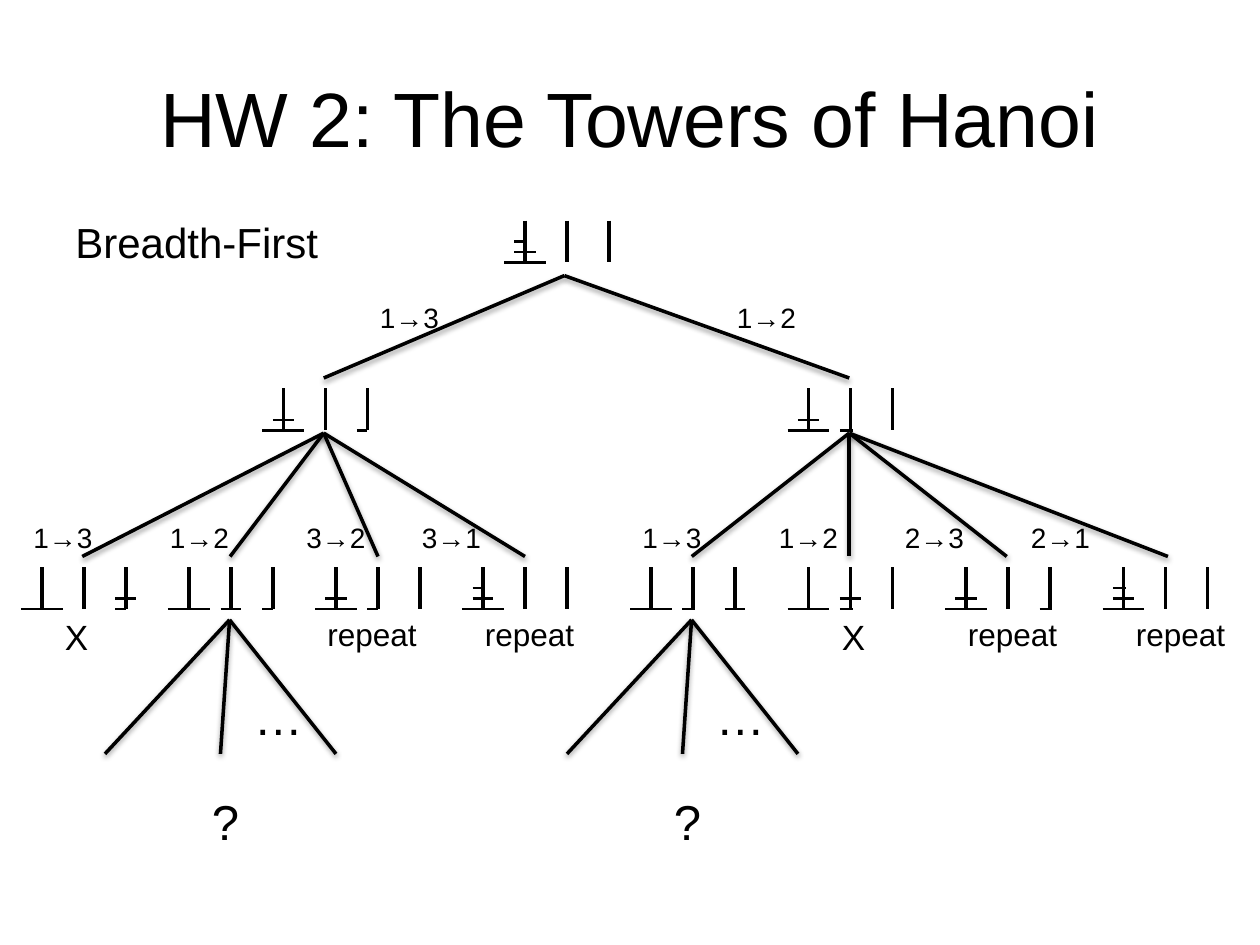
from lxml import etree
from pptx import Presentation
from pptx.dml.color import RGBColor
from pptx.enum import shapes, text
from pptx.oxml.ns import qn
from pptx.util import Pt

BLACK = "000000"
PEG_GAP = 24
PEG_HEIGHT = 24
DISC_STEP = 6

# Each move: label, label left, branch end, board left peg, discs per peg
# (bottom first), verdict, verdict left
LEFT_MOVES = [
    ("1→3", 12, 47, 24, ("L", "", "SM"), "X", 30),
    ("1→2", 90, 131.5, 108, ("L", "M", "S"), None, 0),
    ("3→2", 168, 216, 192, ("LM", "S", ""), "repeat", 180),
    ("3→1", 234, 300, 276, ("LMS", "", ""), "repeat", 270),
]
RIGHT_MOVES = [
    ("1→3", 360, 395.3, 372, ("L", "S", "M"), None, 0),
    ("1→2", 438, 485.3, 462, ("L", "SM", ""), "X", 474),
    ("2→3", 510, 575.3, 552, ("LM", "", "S"), "repeat", 546),
    ("2→1", 582, 667.4, 642, ("LMS", "", ""), "repeat", 642),
]
VERDICT_SIZES = {"X": (20, 28, 32), "repeat": (18, 66, 29)}


def rgb(color):
    return RGBColor.from_string(color)


def add_line(s, x1, y1, x2, y2, width, shadow=False):
    line = s.shapes.add_connector(
        shapes.MSO_CONNECTOR.STRAIGHT, Pt(x1), Pt(y1), Pt(x2), Pt(y2))
    line.line.color.rgb = rgb(BLACK)
    line.line.width = Pt(width)
    effects = etree.SubElement(line._element.spPr, qn("a:effectLst"))
    if shadow:
        outer = etree.SubElement(effects, qn("a:outerShdw"), blurRad="40000",
                                 dist="20000", dir="5400000", rotWithShape="0")
        color = etree.SubElement(outer, qn("a:srgbClr"), val=BLACK)
        etree.SubElement(color, qn("a:alpha"), val="38000")


def add_branch(s, x1, y1, x2, y2):
    add_line(s, x1, y1, x2, y2, 2, shadow=True)


def add_text(s, words, x, y, w, h, size, title=False):
    sp = s.shapes.add_textbox(Pt(x), Pt(y), Pt(w), Pt(h))
    tf = sp.text_frame
    tf.word_wrap = title
    p = tf.paragraphs[0]
    p.text = words
    p.font.name = "Arial"
    p.font.size = Pt(size)
    p.font.color.rgb = rgb(BLACK)
    if title:
        p.alignment = text.PP_ALIGN.CENTER
        tf.vertical_anchor = text.MSO_ANCHOR.MIDDLE
    else:
        tf.auto_size = text.MSO_AUTO_SIZE.SHAPE_TO_FIT_TEXT


def add_move_label(s, move, x, y):
    add_text(s, move, x, y, 49, 26.7, 16)


def add_board(s, left, top, pegs, small=7.2):
    """Three pegs with their stacked discs; small discs sit left of the peg."""
    reach = {"L": (12, 12), "M": (6, 6), "S": (6, small - 6)}
    bottom = top + PEG_HEIGHT
    for i, discs in enumerate(pegs):
        x = left + i * PEG_GAP
        add_line(s, x, top, x, bottom, 2.25)
        for level, disc in enumerate(discs):
            y = bottom - level * DISC_STEP
            before, after = reach[disc]
            add_line(s, x - before, y, x + after, y, 1.5)


def add_moves(s, apex, moves, small):
    for move, label_x, end, left, pegs, verdict, verdict_x in moves:
        add_branch(s, apex, 247.5, end, 318)
        add_move_label(s, move, label_x, 294)
        add_board(s, left, 324, pegs, small)
        if verdict:
            size, w, h = VERDICT_SIZES[verdict]
            add_text(s, verdict, verdict_x, 348, w, h, size)


def add_unexplored(s, apex):
    for dx in (-71.2, -5.2, 60.8):
        add_branch(s, apex, 354.2, apex + dx, 430.8)
    add_text(s, "…", apex + 6.8, 388.8, 43, 41, 28)
    add_text(s, "?", apex - 17.2, 448.5, 30, 41, 28)


def main():
    prs = Presentation()
    prs.slide_width, prs.slide_height = Pt(720), Pt(540)
    s = prs.slides.add_slide(prs.slide_layouts[6])

    # Headings
    add_text(s, "HW 2: The Towers of Hanoi", 36, 21.6, 648, 90, 44, title=True)
    add_text(s, "Breadth-First", 36, 120, 155, 36.7, 24)

    # Start position and first moves
    add_board(s, 300, 126, ("LMS", "", ""))
    for move, label_x, end, left, pegs, small in (
            ("1→3", 210, 185, 162, ("LM", "", "S"), 6),
            ("1→2", 414, 485.3, 462, ("LM", "S", ""), 7.2)):
        add_branch(s, 322.5, 157.5, end, 216)
        add_move_label(s, move, label_x, 168)
        add_board(s, left, 222, pegs, small)

    # Second moves
    add_moves(s, 185, LEFT_MOVES, 6)
    add_moves(s, 485.3, RIGHT_MOVES, 7.2)

    # Positions still to expand
    for apex in (131.2, 395.2):
        add_unexplored(s, apex)

    prs.save("out.pptx")


if __name__ == "__main__":
    main()
